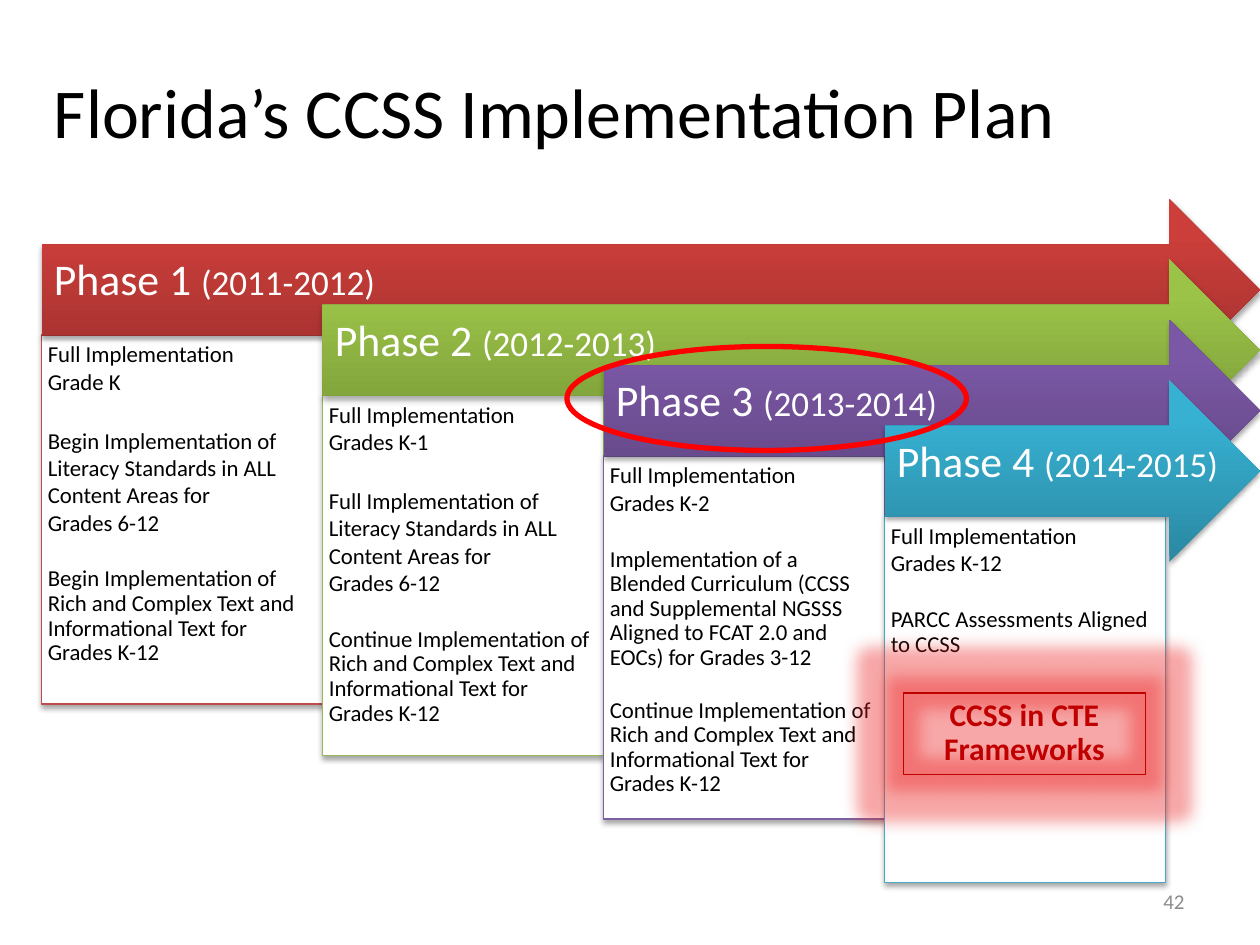
from lxml import etree
from pptx import Presentation
from pptx.dml.color import RGBColor
from pptx.enum.shapes import MSO_SHAPE as Shape
from pptx.enum.text import MSO_ANCHOR as Anchor, PP_ALIGN as Align
from pptx.oxml import parse_xml
from pptx.util import Inches, Pt

WIDTH, HEIGHT = 10, 7.5
LEFT, TOP = 0.33, 1.58          # corner of the phase staircase
COLUMN, ROW = 2.23, 0.48        # one step right, one step down
FONT = "Calibri"
BLACK = RGBColor(0x00, 0x00, 0x00)
WHITE = RGBColor(0xFF, 0xFF, 0xFF)
GRAY = RGBColor(0x8C, 0x8C, 0x8C)
RED = RGBColor(0xFF, 0x00, 0x00)
DARK_RED = RGBColor(0xC0, 0x00, 0x00)

MAIN_NS = "http://schemas.openxmlformats.org/drawingml/2006/main"
SHADOW = ('<a:outerShdw blurRad="39370" dist="22860" dir="5400000" rotWithShape="0">'
          '<a:srgbClr val="000000"><a:alpha val="35000"/></a:srgbClr></a:outerShdw>')
GLOW = ('<a:glow rad="228600"><a:srgbClr val="ED2525">'
        '<a:alpha val="40000"/></a:srgbClr></a:glow>')

LITERACY = "Implementation of Literacy Standards in ALL Content Areas for"
RICH_TEXT = ("Implementation of Rich and Complex Text and "
             "Informational Text for Grades K-12")
BLENDED = ("Implementation of a Blended Curriculum (CCSS and Supplemental NGSSS "
           "Aligned to FCAT 2.0 and EOCs) for Grades 3-12")

# Years, panel rows, line, arrow dark, arrow light, then (text, space before, line spacing)
PHASES = [
    ("2011-2012", 6.1, RGBColor(0xBF, 0x4C, 0x48),
     RGBColor(0x9C, 0x2F, 0x2D), RGBColor(0xCB, 0x3E, 0x3A),
     [("Full Implementation", 0, 1), ("Grade K", 0, 1),
      ("Begin " + LITERACY, 18, 1), ("Grades 6-12", 0, 1),
      ("Begin " + RICH_TEXT, 18, 0.9)]),
    ("2012-2013", 5.95, RGBColor(0x98, 0xB9, 0x55),
     RGBColor(0x77, 0x97, 0x37), RGBColor(0x9B, 0xC3, 0x48),
     [("Full Implementation", 0, 1), ("Grades K-1", 0, 1),
      ("Full " + LITERACY, 18, 1), ("Grades 6-12", 0, 1),
      ("Continue " + RICH_TEXT, 18, 0.9)]),
    ("2013-2014", 6, RGBColor(0x7D, 0x60, 0xA0),
     RGBColor(0x5F, 0x44, 0x80), RGBColor(0x7B, 0x58, 0xA6),
     [("Full Implementation", 0, 1), ("Grades K-2", 0, 1),
      (BLENDED, 18, 0.9), ("Continue " + RICH_TEXT, 16, 0.9)]),
    ("2014-2015", 6.05, RGBColor(0x46, 0xAA, 0xC5),
     RGBColor(0x2A, 0x88, 0xA2), RGBColor(0x37, 0xB1, 0xD2),
     [("Full Implementation", 0, 1), ("Grades K-12", 0, 1),
      ("PARCC Assessments Aligned to CCSS", 18, 0.9)]),
]

deck = Presentation()
deck.slide_width, deck.slide_height = Inches(WIDTH), Inches(HEIGHT)
page = deck.slides.add_slide(deck.slide_layouts[6])


def add_box(kind, left, top, width, height, effect="", insets=(0.1, 0.05, 0.1, 0.05),
            anchor=Anchor.TOP):
    """Add a preset shape, or a text box when kind is None, sized in inches."""
    place = [Inches(length) for length in (left, top, width, height)]
    if kind is None:
        box = page.shapes.add_textbox(*place)
    else:
        box = page.shapes.add_shape(kind, *place)
        box.shadow.inherit = False
        if effect:
            effects = box.element.spPr.find(f"{{{MAIN_NS}}}effectLst")
            holder = parse_xml(f'<a:effectLst xmlns:a="{MAIN_NS}">{effect}</a:effectLst>')
            effects.extend(list(holder))
    frame = box.text_frame
    settings = dict(zip(("margin_left", "margin_top", "margin_right", "margin_bottom"),
                        map(Inches, insets)), word_wrap=True, vertical_anchor=anchor)
    for name, value in settings.items():
        setattr(frame, name, value)
    return box


def add_span(para, text, size, color, align=Align.LEFT, bold=False):
    """Add a formatted run to a paragraph."""
    para.alignment = align
    span = para.add_run()
    span.text = text
    for name, value in dict(name=FONT, size=Pt(size), bold=bold).items():
        setattr(span.font, name, value)
    span.font.color.rgb = color


# Title
title = add_box(None, 0.033 * WIDTH, 0.25, 0.9 * WIDTH, HEIGHT / 6, anchor=Anchor.MIDDLE)
add_span(title.text_frame.paragraphs[0], "Florida’s CCSS Implementation Plan", 40, BLACK)

# Panels under the arrows
for step, (years, rows, line, dark, light, lines) in enumerate(PHASES):
    panel = add_box(Shape.RECTANGLE, LEFT + step * COLUMN, TOP + (step + 2.25) * ROW,
                    COLUMN, rows * ROW, SHADOW, insets=(0.05, 0.04, 0.05, 0.05))
    panel.fill.solid()
    panel.fill.fore_color.rgb = WHITE
    panel.line.color.rgb = line
    panel.line.width = Pt(0.75)
    for number, (text, before, spacing) in enumerate(lines):
        frame = panel.text_frame
        para = frame.add_paragraph() if number else frame.paragraphs[0]
        para.space_before = Pt(before)
        para.line_spacing = spacing
        add_span(para, text, 13, BLACK)

# Arrows, each running to the right edge of the slide, with their labels
for step, (years, rows, line, dark, light, lines) in enumerate(PHASES):
    left, top = LEFT + step * COLUMN, TOP + step * ROW
    arrow = add_box(Shape.RIGHT_ARROW, left, top, WIDTH - left, 3 * ROW, SHADOW)
    arrow.fill.gradient()
    arrow.fill.gradient_angle = 90
    for stop, color, position in zip(arrow.fill.gradient_stops, (dark, light), (0, 0.8)):
        stop.color.rgb = color
        stop.position = position
    arrow.line.fill.background()
    label = add_box(None, left, top + 0.75 * ROW, WIDTH - left, 1.5 * ROW,
                    insets=(0.1, 0.1, 0.28, 0.23), anchor=Anchor.MIDDLE)
    para = label.text_frame.paragraphs[0]
    para.line_spacing = 0.9
    add_span(para, f"Phase {step + 1} ", 25, WHITE)
    add_span(para, f"({years})", 20, WHITE)

# Ring around the current phase
ring = add_box(Shape.OVAL, 0.45 * WIDTH, 2.75, 0.317 * WIDTH, 0.11 * HEIGHT)
ring.fill.background()
ring.line.color.rgb = RED
ring.line.width = Pt(3)

# Glowing callout
callout = add_box(Shape.RECTANGLE, 0.717 * WIDTH, 5.5, 0.192 * WIDTH, 0.65, GLOW)
callout.fill.background()
callout.line.color.rgb = DARK_RED
callout.line.width = Pt(0.75)
para = callout.text_frame.paragraphs[0]
para.line_spacing = 0.9
add_span(para, "CCSS in CTE Frameworks", 18, DARK_RED, Align.CENTER, True)

# Slide number
number_box = add_box(None, 0.717 * WIDTH, 6.95, 0.233 * WIDTH, 0.4, anchor=Anchor.MIDDLE)
add_span(number_box.text_frame.paragraphs[0], "42", 12, GRAY, Align.RIGHT)

deck.save("out.pptx")
